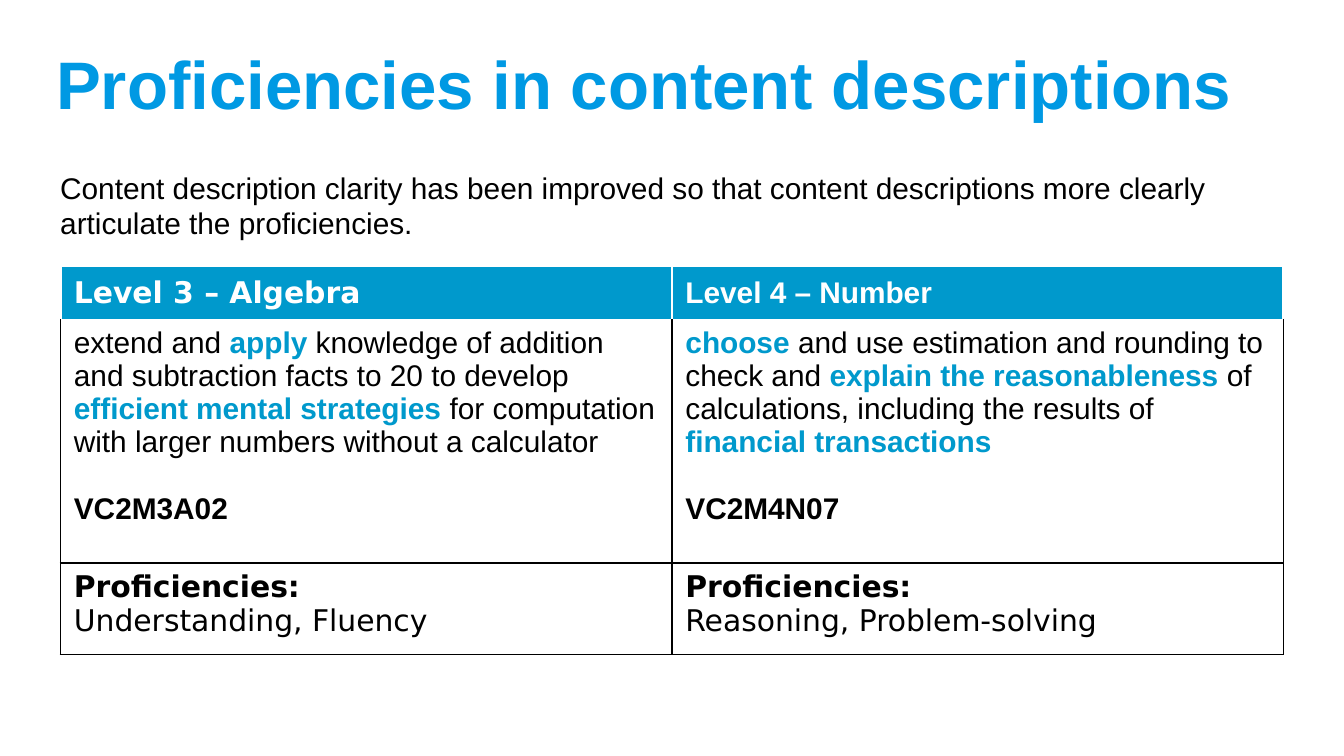
"""Build the slide on proficiencies in content descriptions."""
from lxml import etree
from pptx import Presentation
from pptx.dml.color import RGBColor
from pptx.enum.text import MSO_ANCHOR
from pptx.oxml.ns import qn
from pptx.util import Inches, Pt

MIDDLE = MSO_ANCHOR.MIDDLE
COLORS = {"title": "0099E3", "teal": "0099CC", "black": "000000", "white": "FFFFFF"}
SANS = "DejaVu Sans"


def write(para, text, size=16, font="Arial", color="black", bold=False, accent="teal"):
    for i, part in enumerate(text.split("*")):
        if not part:
            continue
        strong = i % 2 == 1
        run = para.add_run()
        run.text = part
        run.font.size = Pt(size)
        run.font.name = font
        run.font.bold = bold or strong
        run.font.color.rgb = RGBColor.from_string(COLORS[accent if strong else color])


def dress(cell, fill, sides, line, width):
    props = cell._tc.get_or_add_tcPr()
    for side in sides:
        edge = etree.SubElement(props, qn(f"a:ln{side}"), w=str(Pt(width)))
        solid = etree.SubElement(edge, qn("a:solidFill"))
        etree.SubElement(solid, qn("a:srgbClr"), val=COLORS[line])
    cell.fill.solid()
    cell.fill.fore_color.rgb = RGBColor.from_string(COLORS[fill])


prs = Presentation()
prs.slide_width, prs.slide_height = Inches(10), Inches(10 * 9 / 16)
slide = prs.slides.add_slide(prs.slide_layouts[6])

title = slide.shapes.add_textbox(Inches(0.32), Inches(0.25), Inches(9.33), Inches(0.73)).text_frame
title.word_wrap = True
title.vertical_anchor = MIDDLE
write(title.paragraphs[0], "Proficiencies in content descriptions", size=36, color="title", bold=True)

intro = slide.shapes.add_textbox(Inches(0.35), Inches(1.21), Inches(9.33), Inches(0.56)).text_frame
intro.word_wrap = True
write(intro.paragraphs[0], "Content description clarity has been improved so that content "
      "descriptions more clearly articulate the proficiencies.")

levels = [
    ("Level 3 – Algebra", SANS,
     "extend and *apply *knowledge of addition and subtraction facts to 20 to develop "
     "*efficient mental strategies* for computation with larger numbers without a calculator",
     "VC2M3A02", "Understanding, Fluency"),
    ("Level 4 – Number", "Arial",
     "*choose *and use estimation and rounding to check and *explain the reasonableness *"
     "of calculations, including the results of *financial transactions*",
     "VC2M4N07", "Reasoning, Problem-solving"),
]

table = slide.shapes.add_table(3, 2, Inches(0.45), Inches(1.98), Inches(9.1), Inches(2.89)).table
table.horz_banding = False
for row, high in zip(table.rows, (0.4, 1.81, 0.68)):
    row.height = Inches(high)

for col, (name, font, text, code, skills) in enumerate(levels):
    table.columns[col].width = Inches(4.55)
    head, body, foot = (table.cell(row, col) for row in range(3))

    dress(head, "teal", "LRT", "white", 1.5)
    head.vertical_anchor = MIDDLE
    write(head.text_frame.paragraphs[0], name, font=font, color="white", bold=True)

    dress(body, "white", "LRB", "black", 1)
    write(body.text_frame.paragraphs[0], text)
    para = body.text_frame.add_paragraph()
    para.space_before = Pt(18)
    write(para, code, bold=True)

    dress(foot, "white", "LRTB", "black", 1)
    para = foot.text_frame.paragraphs[0]
    write(para, "*Proficiencies:*", font=SANS, accent="black")
    para.add_line_break()
    write(para, skills, font=SANS)

prs.save("out.pptx")
